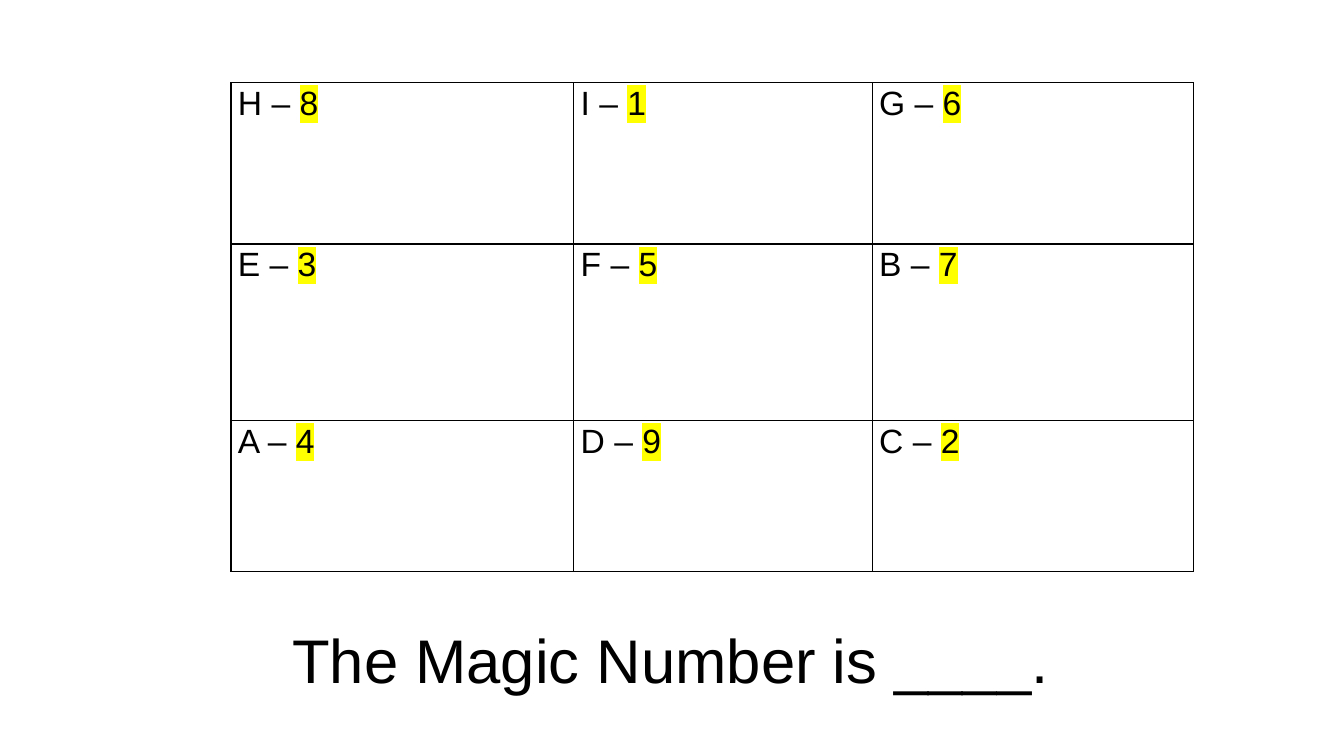
"""Build the magic square slide: a three by three table and its closing line."""
from lxml.etree import SubElement
from pptx import Presentation
from pptx.dml.color import RGBColor
from pptx.enum.text import MSO_AUTO_SIZE
from pptx.oxml import parse_xml
from pptx.oxml.ns import nsdecls, qn
from pptx.util import Inches, Pt

ROWS = [
    [("H", 8), ("I", 1), ("G", 6)],
    [("E", 3), ("F", 5), ("B", 7)],
    [("A", 4), ("D", 9), ("C", 2)],
]
CLOSE = "The Magic Number is ____."
WIDE = [3.4, 2.96, 3.19]
HIGH = [1.6, 1.75, 1.5]
GRID = (2.29, 0.82, sum(WIDE), sum(HIGH))
LINE = (2.8, 6.12, 7.73, 0.84)
BLACK = RGBColor(0, 0, 0)
YELLOW = RGBColor(255, 255, 0)
CELL = {"margin_left": Inches(0.07), "margin_right": Inches(0.07),
        "margin_top": 0, "margin_bottom": 0}
FLAGS = {"first_row": False, "horz_banding": False}
SMALL = {"name": "Arial", "size": Pt(24)}
LARGE = {"name": "Arial", "size": Pt(44)}


def apply(item, form):
    for key, value in form.items():
        setattr(item, key, value)


def add_run(para, text, form):
    run = para.add_run()
    run.text = text
    apply(run.font, form)
    run.font.color.rgb = BLACK
    return run


def mark(run):
    props = run.font._element
    light = SubElement(props, qn("a:highlight"))
    SubElement(light, qn("a:srgbClr"), val=str(YELLOW))
    props.find(qn("a:latin")).addprevious(light)


def border(cell):
    props = cell._tc.get_or_add_tcPr()
    for spot, side in enumerate("LRTB"):
        props.insert(spot, parse_xml(
            f'<a:ln{side} {nsdecls("a")} w="{Pt(1)}"><a:solidFill>'
            f'<a:srgbClr val="{BLACK}"/></a:solidFill></a:ln{side}>'))


def fill_cell(cell, letter, digit):
    apply(cell, CELL)
    cell.fill.background()
    border(cell)
    para = cell.text_frame.paragraphs[0]
    para.line_spacing = 1.07
    add_run(para, f"{letter} – ", SMALL)
    mark(add_run(para, str(digit), SMALL))


def add_grid(slide):
    table = slide.shapes.add_table(
        len(HIGH), len(WIDE), *map(Inches, GRID)).table
    apply(table, FLAGS)
    for col, width in zip(table.columns, WIDE):
        col.width = Inches(width)
    for row, height, items in zip(table.rows, HIGH, ROWS):
        row.height = Inches(height)
        for cell, (letter, digit) in zip(row.cells, items):
            fill_cell(cell, letter, digit)


def add_line(slide):
    frame = slide.shapes.add_textbox(*map(Inches, LINE)).text_frame
    apply(frame, {"word_wrap": True,
                  "auto_size": MSO_AUTO_SIZE.SHAPE_TO_FIT_TEXT})
    add_run(frame.paragraphs[0], CLOSE, LARGE)


def main():
    deck = Presentation()
    apply(deck, {"slide_width": Inches(13.33), "slide_height": Inches(7.5)})
    slide = deck.slides.add_slide(deck.slide_layouts[6])
    add_grid(slide)
    add_line(slide)
    deck.save("out.pptx")


if __name__ == "__main__":
    main()
